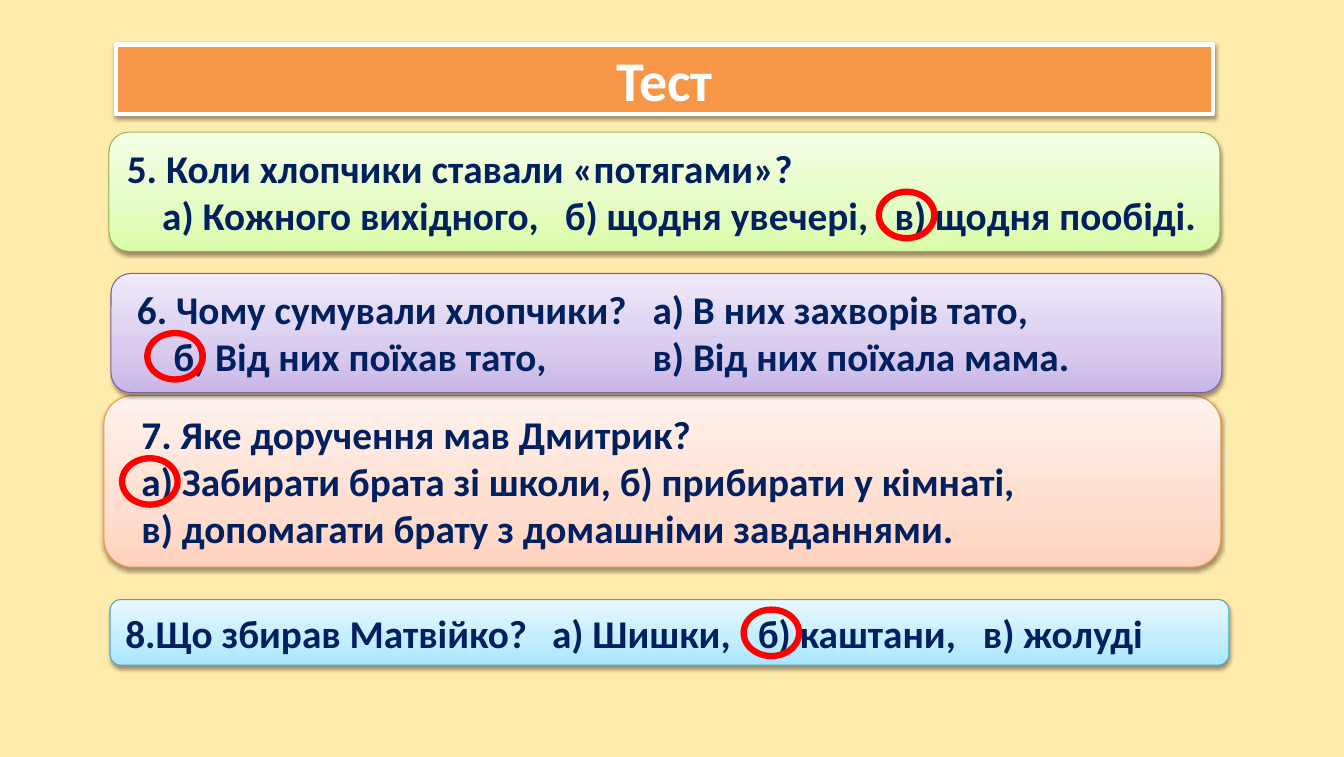
from copy import deepcopy

from lxml import etree
from pptx import Presentation
from pptx.dml.color import RGBColor
from pptx.enum.shapes import MSO_SHAPE
from pptx.enum.text import MSO_ANCHOR, PP_ALIGN
from pptx.oxml.ns import qn
from pptx.util import Inches, Pt

RECT, ROUND, OVAL = MSO_SHAPE.RECTANGLE, MSO_SHAPE.ROUNDED_RECTANGLE, MSO_SHAPE.OVAL
LEFT, CENTER = PP_ALIGN.LEFT, PP_ALIGN.CENTER
TOP, MIDDLE = MSO_ANCHOR.TOP, MSO_ANCHOR.MIDDLE
FONT = "Calibri"
COLORS = {"background": "FFEBAB", "title": "F79646", "white": "FFFFFF",
          "text": "002060", "mark": "FF0000", "shadow": "000000"}
# Outline, then gradient from bottom to top
THEMES = {
    "green": ("98B955", ("DAFDA7", "E4FCC2", "F5FFE7")),
    "orange": ("F69240", ("FFD2BD", "FFDED0", "FFF2ED")),
    "purple": ("7D60A0", ("C9B5E8", "D8CBEE", "F0EAF9")),
    "blue": ("46AAC5", ("A7E6FF", "C1EDFF", "E7F8FF")),
}
STOPS = (0, 0.35, 1)
MARK_W, MARK_H = 0.55, 0.46

# Theme, box, position of the answer mark inside the box,
# and lines made of (distance from the text edge, text) pieces
QUESTIONS = [
    ("green", (1.08, 1.31, 11.01, 1.18), (7.63, 0.59), [
        [(0, "5. Коли хлопчики ставали «потягами»?")],
        [(0.35, "а) Кожного вихідного,"), (4.34, "б) щодня увечері,"),
         (7.61, "в) щодня пообіді.")]]),
    ("orange", (1.03, 3.92, 11.07, 1.7), (0.18, 0.62), [
        [(0.17, "7. Яке доручення мав Дмитрик?")],
        [(0.17, "а) Забирати брата зі школи, б) прибирати у кімнаті,")],
        [(0.17, "в) допомагати брату з домашніми завданнями.")]]),
    ("purple", (1.1, 2.71, 11.01, 1.18), (0.36, 0.59), [
        [(0.08, "6. Чому сумували хлопчики?"), (5.19, "а) В них захворів тато,")],
        [(0.44, "б) Від них поїхав тато,"), (5.19, "в) Від них поїхала мама.")]]),
    ("blue", (1.09, 5.94, 11.09, 0.65), (6.28, 0.1), [
        [(0, "8.Що збирав Матвійко?"), (4.23, "а) Шишки,"),
         (6.27, "б) каштани,"), (8.5, "в) жолуді")]]),
]


def rgb(name):
    return RGBColor.from_string(COLORS.get(name, name))


def add_box(slide, kind, box, line, width):
    sp = slide.shapes.add_shape(kind, *map(Inches, box))
    sp.line.color.rgb = rgb(line)
    sp.line.width = Pt(width)
    sp.shadow.inherit = False
    return sp


def add_shadow(sp):
    effects = sp._element.spPr.find(qn("a:effectLst"))
    shadow = etree.SubElement(effects, qn("a:outerShdw"), blurRad=str(Pt(3.1)),
                              dist=str(Pt(1.6)), dir="5400000", rotWithShape="0")
    color = etree.SubElement(shadow, qn("a:srgbClr"), val=COLORS["shadow"])
    etree.SubElement(color, qn("a:alpha"), val="38000")


def fill_gradient(sp, colors):
    sp.fill.gradient()
    sp.fill.gradient_angle = 90
    stops = sp._element.spPr.find(qn("a:gradFill")).find(qn("a:gsLst"))
    stops.append(deepcopy(stops[-1]))
    for stop, position, color in zip(sp.fill.gradient_stops, STOPS, colors):
        stop.position = position
        stop.color.rgb = rgb(color)


def add_text(sp, lines, size, color, align, anchor):
    """Write lines of (offset, text) pieces, placing offsets with tab stops."""
    tf = sp.text_frame
    tf.word_wrap = True
    tf.vertical_anchor = anchor
    tf.margin_left = tf.margin_right = Inches(0.12)
    tf.margin_top = tf.margin_bottom = Inches(0.06)
    for i, pieces in enumerate(lines):
        p = tf.paragraphs[0] if i == 0 else tf.add_paragraph()
        p.text = "".join(("\t" if x else "") + text for x, text in pieces)
        p.alignment = align
        p.font.name, p.font.size, p.font.bold = FONT, Pt(size), True
        p.font.color.rgb = rgb(color)
        offsets = [x for x, _ in pieces if x]
        if offsets:
            tabs = etree.Element(qn("a:tabLst"))
            p._p.get_or_add_pPr().insert(0, tabs)
            for x in offsets:
                etree.SubElement(tabs, qn("a:tab"), pos=str(Inches(x)), algn="l")


def add_title(slide, box, text):
    sp = add_box(slide, RECT, box, "white", 3)
    sp.fill.solid()
    sp.fill.fore_color.rgb = rgb("title")
    add_shadow(sp)
    add_text(sp, [[(0, text)]], 40, "white", CENTER, MIDDLE)


def add_question(slide, theme, box, lines):
    line, gradient = THEMES[theme]
    sp = add_box(slide, ROUND, box, line, 0.75)
    fill_gradient(sp, gradient)
    add_shadow(sp)
    add_text(sp, lines, 28, "text", LEFT, TOP)


def add_mark(slide, box, offset):
    """Circle the right answer at an offset from the corner of its box."""
    place = (box[0] + offset[0], box[1] + offset[1], MARK_W, MARK_H)
    add_box(slide, OVAL, place, "mark", 4.5).fill.background()


def main():
    prs = Presentation()
    prs.slide_width, prs.slide_height = Inches(13.32), Inches(7.5)
    slide = prs.slides.add_slide(prs.slide_layouts[6])
    slide.background.fill.solid()
    slide.background.fill.fore_color.rgb = rgb("background")
    for theme, box, _, lines in QUESTIONS:
        add_question(slide, theme, box, lines)
    for _, box, offset, _ in QUESTIONS:
        add_mark(slide, box, offset)
    add_title(slide, (1.15, 0.44, 10.87, 0.69), "Тест")
    prs.save("out.pptx")


if __name__ == "__main__":
    main()
